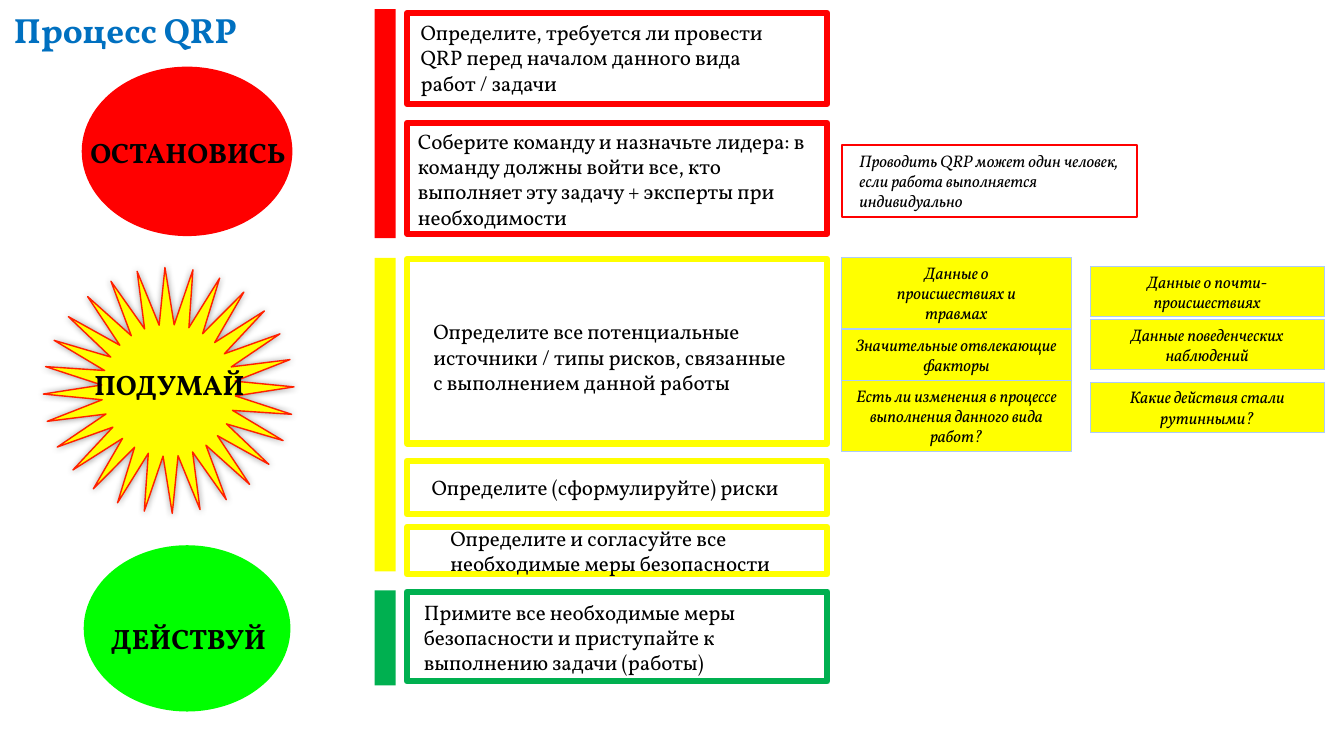
from dataclasses import dataclass
from math import cos, pi, radians, sin
from typing import Optional

from lxml.etree import SubElement
from pptx import Presentation
from pptx.dml.color import RGBColor as RGB
from pptx.enum.shapes import MSO_SHAPE as Shape
from pptx.enum.text import MSO_ANCHOR as Anchor, MSO_AUTO_SIZE as AutoSize, PP_ALIGN as Align
from pptx.oxml.ns import qn
from pptx.util import Cm, Pt


@dataclass(frozen=True)
class Theme:
    font: str = "Vollkorn"
    black: str = "000000"
    white: str = "FFFFFF"
    title: str = "0070C0"
    stop: str = "FF0000"
    think: str = "FFFF00"
    act: str = "00B050"
    act_disc: str = "00FF00"
    burst_line: str = "FF2000"
    note_line: str = "ACCBF9"
    title_size: float = 25
    label_size: float = 20
    step_size: float = 15
    note_size: float = 12


T = Theme()


@dataclass(frozen=True)
class Box:
    """Left, top, width and height in centimetres."""
    x: float
    y: float
    w: float
    h: float

    def emu(self) -> tuple:
        return Cm(self.x), Cm(self.y), Cm(self.w), Cm(self.h)


@dataclass(frozen=True)
class Step:
    color: str
    top: float
    height: float
    fill: Optional[str]
    text_box: Box
    indent: float
    lines: tuple


@dataclass(frozen=True)
class Note:
    box: Box
    lines: tuple


@dataclass(frozen=True)
class Label:
    box: Box
    text: str


FRAME_X, FRAME_W = 10.26, 10.59
STEPS = [
    Step(T.stop, 0.33, 2.29, None, Box(9.98, 0.36, 9.96, 2.18), 0.62,
         ("Определите, требуется ли провести QRP перед началом данного вида работ / задачи",)),
    Step(T.stop, 3.1, 2.79, None, Box(10.26, 3.1, 10.36, 2.82), 0.27,
         ("Соберите команду и назначьте лидера: в команду должны войти все, кто "
          "выполняет эту задачу + эксперты при", "необходимости")),
    Step(T.think, 6.53, 4.65, T.white, Box(10.34, 7.9, 10.19, 2.18), 0.58,
         ("Определите все потенциальные источники / типы рисков, связанные",
          "с выполнением данной работы")),
    Step(T.think, 11.61, 1.35, T.white, Box(10.26, 11.84, 10.08, 0.89), 0.62,
         ("Определите (сформулируйте) риски",)),
    Step(T.think, 13.28, 1.19, T.white, Box(10.9, 13.11, 9.02, 1.55), 0.45,
         ("Определите и согласуйте все необходимые меры безопасности",)),
    Step(T.act, 14.91, 2.26, None, Box(10.11, 14.96, 9.02, 2.18), 0.57,
         ("Примите все необходимые меры безопасности и приступайте к выполнению задачи (работы)",)),
]
BARS = [(T.stop, Box(9.44, 0.23, 0.53, 5.77)),
        (T.think, Box(9.44, 6.5, 0.53, 7.9)),
        (T.act, Box(9.44, 14.88, 0.53, 2.39))]
NOTES = [
    Note(Box(21.21, 6.48, 5.79, 1.8), ("Данные о", "происшествиях и", "травмах")),
    Note(Box(21.21, 8.31, 5.79, 1.27), ("Значительные отвлекающие факторы",)),
    Note(Box(21.21, 9.58, 5.79, 1.8), ("Есть ли изменения в процессе выполнения данного вида работ?",)),
    Note(Box(27.48, 6.71, 5.89, 1.27), ("Данные о почти-", "происшествиях")),
    Note(Box(27.48, 8.05, 5.89, 1.27), ("Данные поведенческих наблюдений",)),
    Note(Box(27.48, 9.63, 5.89, 1.27), ("Какие действия стали рутинными?",)),
]
SOLO_NOTE = Note(Box(21.21, 3.66, 7.44, 1.8),
                 ("Проводить QRP может один человек, если работа выполняется индивидуально",))
DISCS = [(T.stop, Box(2.06, 1.68, 5.31, 4.27)), (T.act_disc, Box(2.11, 13.74, 5.21, 4.19))]
LABELS = [Label(Box(0.74, 3.28, 8, 1.12), "ОСТАНОВИСЬ"),
          Label(Box(1.17, 9.14, 6.2, 1.12), "ПОДУМАЙ"),
          Label(Box(1.09, 15.52, 7.32, 1.12), "ДЕЙСТВУЙ")]


def paint(sp, fill: Optional[str], line: Optional[str] = None, width: float = 0) -> None:
    sp.shadow.inherit = False
    if fill:
        sp.fill.solid()
        sp.fill.fore_color.rgb = RGB.from_string(fill)
    else:
        sp.fill.background()
    if line:
        sp.line.color.rgb = RGB.from_string(line)
        sp.line.width = Pt(width)
    else:
        sp.line.fill.background()


def write(sp, lines: tuple, size: float, color: str = T.black, align=Align.LEFT,
          anchor=Anchor.MIDDLE, indent: float = 0.25, wrap: bool = True, **style: bool) -> None:
    tf = sp.text_frame
    frame = {"word_wrap": wrap, "auto_size": AutoSize.SHAPE_TO_FIT_TEXT,
             "vertical_anchor": anchor, "margin_left": Cm(indent), "margin_right": Cm(0.25),
             "margin_top": Cm(0.13), "margin_bottom": Cm(0.13)}
    for name, value in frame.items():
        setattr(tf, name, value)
    font = {"name": T.font, "size": Pt(size), **style}
    for i, line in enumerate(lines):
        p = tf.add_paragraph() if i else tf.paragraphs[0]
        p.alignment = align
        r = p.add_run()
        r.text = line
        for name, value in font.items():
            setattr(r.font, name, value)
        r.font.color.rgb = RGB.from_string(color)


def add_shape(s, box: Box, fill: Optional[str], line: Optional[str] = None,
              width: float = 0, kind=Shape.RECTANGLE):
    sp = s.shapes.add_shape(kind, *box.emu())
    paint(sp, fill, line, width)
    return sp


def add_step(s, step: Step) -> None:
    add_shape(s, Box(FRAME_X, step.top, FRAME_W, step.height), step.fill, step.color, 4.5)
    tb = s.shapes.add_textbox(*step.text_box.emu())
    write(tb, step.lines, T.step_size, indent=step.indent)


def add_burst(s, cx: float, cy: float, rays: int = 28, start: float = 53.1) -> None:
    outer, inner = (3.16, 3.1), (1.69, 1.66)
    points = []
    for i in range(2 * rays):
        rx, ry = inner if i % 2 else outer
        a = radians(start) - i * pi / rays
        points.append((Cm(cx + rx * cos(a)), Cm(cy - ry * sin(a))))
    fb = s.shapes.build_freeform(*points[0])
    fb.add_line_segments(points[1:], close=True)
    sp = fb.convert_to_shape()
    paint(sp, T.think, T.burst_line, 1)
    # Soft glow-like shadow
    effects = sp._element.spPr.find(qn("a:effectLst"))
    shadow = SubElement(effects, qn("a:outerShdw"), blurRad=str(Pt(5)), dist="0", dir="0")
    tint = SubElement(shadow, qn("a:srgbClr"), val=T.black)
    SubElement(tint, qn("a:alpha"), val="40000")


def main() -> None:
    prs = Presentation()
    prs.slide_width, prs.slide_height = Cm(33.87), Cm(19.05)
    s = prs.slides.add_slide(prs.slide_layouts[5])

    # Title
    title = s.shapes.title
    title.left, title.top, title.width, title.height = Box(0.1, 0.08, 6.45, 1.32).emu()
    write(title, ("Процесс QRP",), T.title_size, T.title, wrap=False, bold=True)

    # Steps and the bars that group them
    for step in STEPS:
        add_step(s, step)
    for color, box in BARS:
        add_shape(s, box, color)

    # Notes on the right
    for note in NOTES:
        sp = add_shape(s, note.box, T.think, T.note_line, 0.75)
        write(sp, note.lines, T.note_size, align=Align.CENTER, italic=True)
    sp = add_shape(s, SOLO_NOTE.box, None, T.stop, 1.5)
    write(sp, SOLO_NOTE.lines, T.note_size, indent=0.45, italic=True)

    # Stop, think, act signs
    for color, box in DISCS:
        add_shape(s, box, color, kind=Shape.OVAL)
    add_burst(s, 4.25, 9.84)
    for label in LABELS:
        tb = s.shapes.add_textbox(*label.box.emu())
        write(tb, (label.text,), T.label_size, align=Align.CENTER, anchor=Anchor.TOP, bold=True)

    prs.save("out.pptx")


if __name__ == "__main__":
    main()
